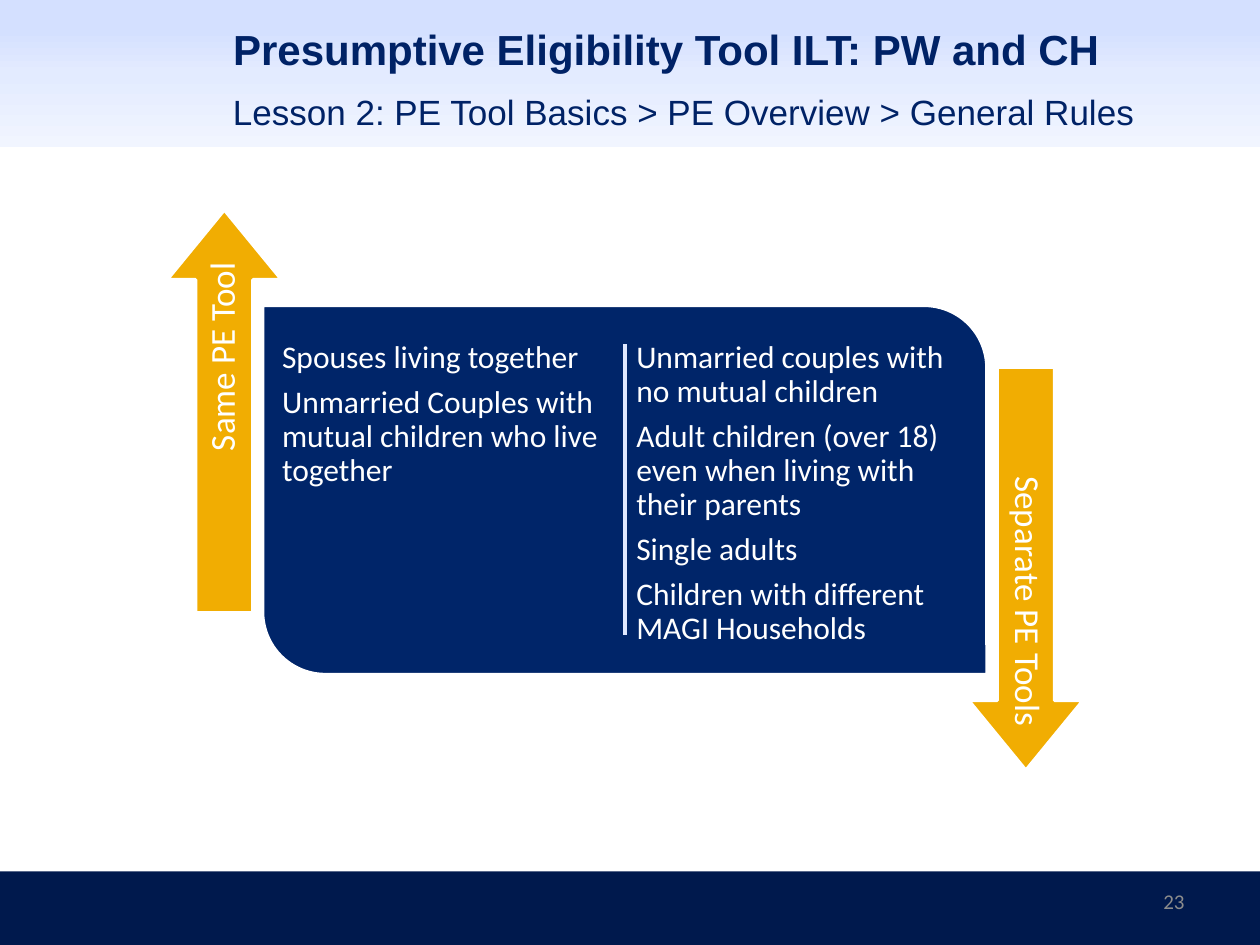
from copy import deepcopy

from lxml import etree
from pptx import Presentation
from pptx import util as u
from pptx.dml.color import RGBColor
from pptx.enum import shapes, text
from pptx.oxml import ns

Pt = u.Pt
HUES = {
    "navy": "002266", "panel": "002569", "foot": "00194D", "gold": "F1AD02",
    "rule": "DFE8FF", "white": "FFFFFF", "gray": "8C8C8C",
}
FADE = [(0.2, "D4E0FF"), (0.5, "E3EBFF"), (1, "F1F5FF")]
LEFT = ["Spouses living together",
        "Unmarried Couples with mutual children who live together"]
RIGHT = ["Unmarried couples with no mutual children",
         "Adult children (over 18) even when living with their parents",
         "Single adults",
         "Children with different MAGI Households"]


def place(item, box):
    item.left, item.top, item.width, item.height = map(Pt, box)


def paint(font, size, hue, face, bold=False):
    font.size, font.name, font.bold = Pt(size), face, bold
    font.color.rgb = RGBColor.from_string(HUES[hue])


def block(slide, kind, box, hue, edge=False):
    """Preset shape with a flat fill and, if asked, a white edge."""
    item = slide.shapes.add_shape(kind, *map(Pt, box))
    item.shadow.inherit = False
    item.fill.solid()
    item.fill.fore_color.rgb = RGBColor.from_string(HUES[hue])
    if edge:
        item.line.color.rgb = RGBColor.from_string(HUES["white"])
        item.line.width = Pt(2)
    else:
        item.line.fill.background()
    return item


def fade(item):
    """Vertical blend through the stops in FADE."""
    item.fill.gradient()
    item.fill.gradient_angle = 270
    stops = item._element.spPr.find(".//" + ns.qn("a:gsLst"))
    stops.append(deepcopy(stops[-1]))
    for stop, (spot, tone) in zip(item.fill.gradient_stops, FADE):
        stop.position = spot
        stop.color.rgb = RGBColor.from_string(tone)


def label(slide, box, words, size, hue, face, align, mid=False):
    item = slide.shapes.add_textbox(*map(Pt, box))
    frame = item.text_frame
    frame.word_wrap = True
    if mid:
        frame.vertical_anchor = text.MSO_ANCHOR.MIDDLE
    frame.text = words
    para = frame.paragraphs[0]
    para.alignment = align
    paint(para.runs[0].font, size, hue, face)
    return item


def inset(frame, gap):
    frame.margin_left = frame.margin_right = Pt(gap)
    frame.margin_top = frame.margin_bottom = Pt(gap)


def front(slide, holder):
    slide.shapes._spTree.append(holder._element)


def head(slide, words):
    title = slide.shapes.title
    place(title, (126, 5.8, 558, 44.6))
    front(slide, title)
    frame = title.text_frame
    frame.text = words
    frame.auto_size = text.MSO_AUTO_SIZE.NONE
    frame.vertical_anchor = text.MSO_ANCHOR.MIDDLE
    para = frame.paragraphs[0]
    para.alignment = text.PP_ALIGN.LEFT
    paint(para.runs[0].font, 24, "navy", "Arial", True)


def roster(slide, holder, box, lines):
    """List without bullets in a body placeholder."""
    place(holder, box)
    front(slide, holder)
    frame = holder.text_frame
    frame.text = "\n".join(lines)
    frame.auto_size = text.MSO_AUTO_SIZE.NONE
    inset(frame, 5)
    for para in frame.paragraphs:
        props = para._p.get_or_add_pPr()
        props.set("marL", "0")
        props.set("indent", "0")
        etree.SubElement(props, ns.qn("a:buNone"))
        para.line_spacing = 0.9
        para.space_before, para.space_after = Pt(0), Pt(6.3)
        paint(para.runs[0].font, 18, "white", "Calibri")


def rule(slide, x, top, end):
    line = slide.shapes.add_connector(
        shapes.MSO_CONNECTOR.STRAIGHT, Pt(x), Pt(top), Pt(x), Pt(end))
    line.line.color.rgb = RGBColor.from_string(HUES["rule"])
    line.line.width = Pt(2)
    etree.SubElement(line._element.spPr, ns.qn("a:effectLst"))


def arrow(slide, box, tag, words, turn):
    """Gold arrow and its label, both turned the same way."""
    item = block(slide, shapes.MSO_SHAPE.RIGHT_ARROW, box, "gold", True)
    item.adjustments[0], item.adjustments[1] = 0.5, 0.61
    note = label(slide, tag, words, 20, "white", "Calibri",
                 text.PP_ALIGN.RIGHT, True)
    inset(note.text_frame, 5.8)
    note.text_frame.paragraphs[0].line_spacing = 0.9
    item.rotation = note.rotation = turn


def main():
    deck = Presentation()
    deck.slide_width, deck.slide_height = Pt(720), Pt(540)
    slide = deck.slides.add_slide(deck.slide_layouts[3])
    first, second = list(slide.placeholders)[1:3]

    # Footer and header bands
    rect = shapes.MSO_SHAPE.RECTANGLE
    block(slide, rect, (0, 498, 720, 42), "foot")
    fade(block(slide, rect, (0, 0, 720, 84), "white"))

    # Heading, lesson trail and page number
    head(slide, "Presumptive Eligibility Tool ILT: PW and CH")
    label(slide, (126, 48, 558, 36),
          "Lesson 2: PE Tool Basics > PE Overview > General Rules",
          20, "navy", "Arial", text.PP_ALIGN.LEFT)
    label(slide, (516, 500.5, 168, 28.8), "23", 12, "gray", "Calibri",
          text.PP_ALIGN.RIGHT, True)

    # Panel with two lists
    panel = block(slide, shapes.MSO_SHAPE.ROUND_2_DIAG_RECTANGLE,
                  (150, 174.5, 414, 211), "panel", True)
    panel.adjustments[0], panel.adjustments[1] = 0, 0.17
    rule(slide, 357, 196.6, 363)
    roster(slide, first, (156.2, 190, 206, 179.3), LEFT)
    roster(slide, second, (358.6, 190, 193.7, 179.3), RIGHT)

    # Side arrows
    arrow(slide, (13, 202.3, 230.4, 65.5), (22.3, 229, 211, 32.4),
          "Same PE Tool ", 270)
    arrow(slide, (471, 292.3, 230.4, 65.5), (481, 298.8, 211, 32.4),
          "Separate PE Tools", 90)

    deck.save("out.pptx")


if __name__ == "__main__":
    main()
